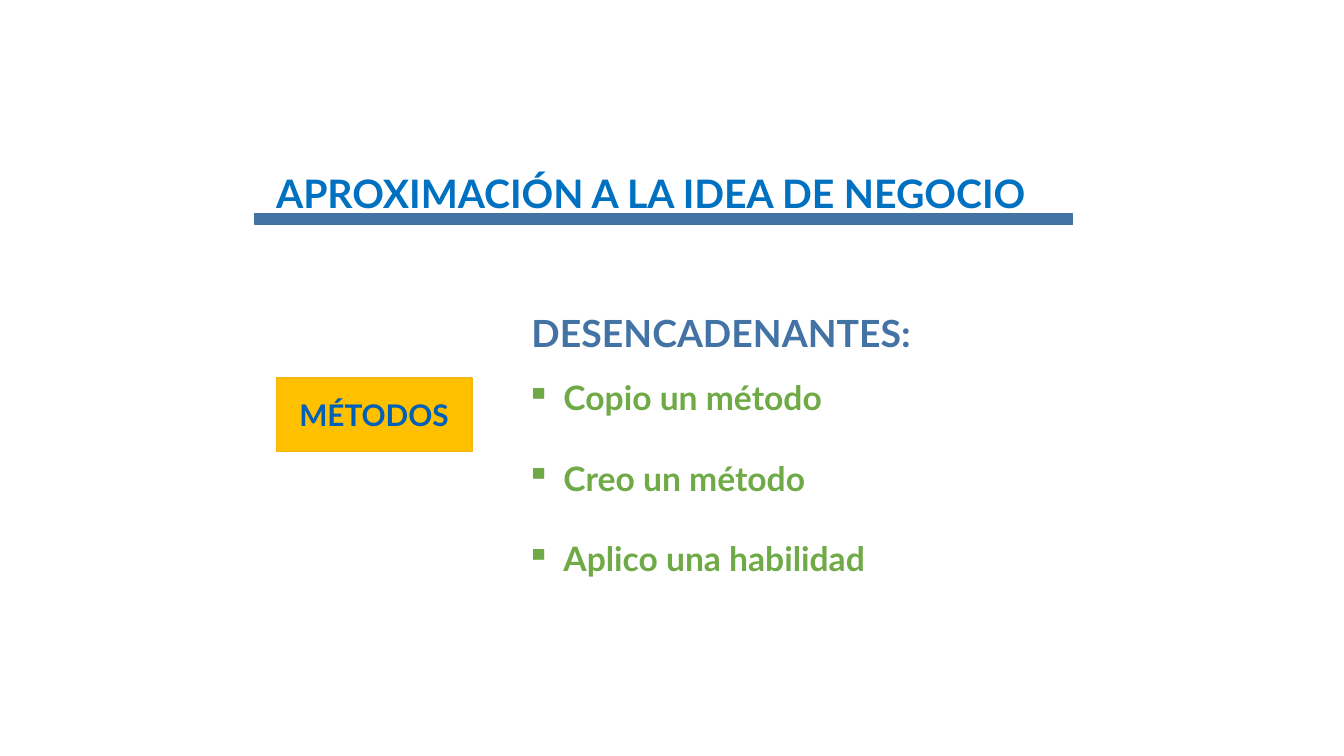
from dataclasses import dataclass

from lxml.etree import SubElement
from pptx import Presentation
from pptx.dml.color import RGBColor
from pptx.enum.shapes import MSO_SHAPE
from pptx.enum.text import MSO_ANCHOR, PP_ALIGN
from pptx.oxml.ns import qn
from pptx.util import Inches, Pt


@dataclass(frozen=True)
class Theme:
    font: str = "Lato"
    title: str = "0070C0"
    heading: str = "4372A5"
    method: str = "6FAA47"
    label: str = "005FB6"
    label_fill: str = "FFC000"
    label_line: str = "F7B512"
    title_size: float = 28
    heading_size: float = 26.7
    method_size: float = 24
    label_size: float = 21.3


theme = Theme()


def set_font(paragraph, size, color):
    paragraph.font.name = theme.font
    paragraph.font.size = Pt(size)
    paragraph.font.bold = True
    paragraph.font.color.rgb = RGBColor.from_string(color)


def add_rectangle(left, top, width, height, fill, line):
    shape = slide.shapes.add_shape(
        MSO_SHAPE.RECTANGLE, Inches(left), Inches(top), Inches(width), Inches(height)
    )
    shape.shadow.inherit = False
    shape.fill.solid()
    shape.fill.fore_color.rgb = RGBColor.from_string(fill)
    shape.line.color.rgb = RGBColor.from_string(line)
    shape.line.width = Pt(1)
    return shape


presentation = Presentation()
presentation.slide_width = Inches(13.33)
presentation.slide_height = Inches(7.5)
slide = presentation.slides.add_slide(presentation.slide_layouts[6])

title_box = slide.shapes.add_textbox(Inches(2.64), Inches(1.22), Inches(10.5), Inches(1.45))
title_box.text_frame.word_wrap = True
title_box.text_frame.vertical_anchor = MSO_ANCHOR.MIDDLE
title = title_box.text_frame.paragraphs[0]
title.text = "APROXIMACIÓN A LA IDEA DE NEGOCIO"
title.line_spacing = 0.9
set_font(title, theme.title_size, theme.title)

heading_box = slide.shapes.add_textbox(Inches(2.01), Inches(3.03), Inches(10.29), Inches(0.55))
heading_box.text_frame.word_wrap = True
heading = heading_box.text_frame.paragraphs[0]
heading.text = "DESENCADENANTES:"
heading.alignment = PP_ALIGN.CENTER
set_font(heading, theme.heading_size, theme.heading)

methods_box = slide.shapes.add_textbox(Inches(5.12), Inches(3.69), Inches(6.02), Inches(2.12))
methods_frame = methods_box.text_frame
methods_frame.word_wrap = True
methods = ["Copio un método", "Creo un método", "Aplico una habilidad"]
for index, method in enumerate(methods):
    paragraph = methods_frame.add_paragraph() if index else methods_frame.paragraphs[0]
    paragraph.text = method
    if index:
        paragraph.space_before = Pt(28.8)
    properties = paragraph._p.get_or_add_pPr()
    properties.set("marL", str(Inches(0.37)))
    properties.set("indent", str(-Inches(0.37)))
    bullet_color = SubElement(properties, qn("a:buClr"))
    SubElement(bullet_color, qn("a:srgbClr"), val=theme.method)
    SubElement(properties, qn("a:buChar"), char="▪")
    set_font(paragraph, theme.method_size, theme.method)

add_rectangle(2.53, 2.12, 8.11, 0.11, theme.heading, theme.heading)

label_box = add_rectangle(2.74, 3.75, 1.94, 0.73, theme.label_fill, theme.label_line)
label_box.text_frame.vertical_anchor = MSO_ANCHOR.MIDDLE
label = label_box.text_frame.paragraphs[0]
label.text = "MÉTODOS"
label.alignment = PP_ALIGN.CENTER
set_font(label, theme.label_size, theme.label)

presentation.save("out.pptx")
